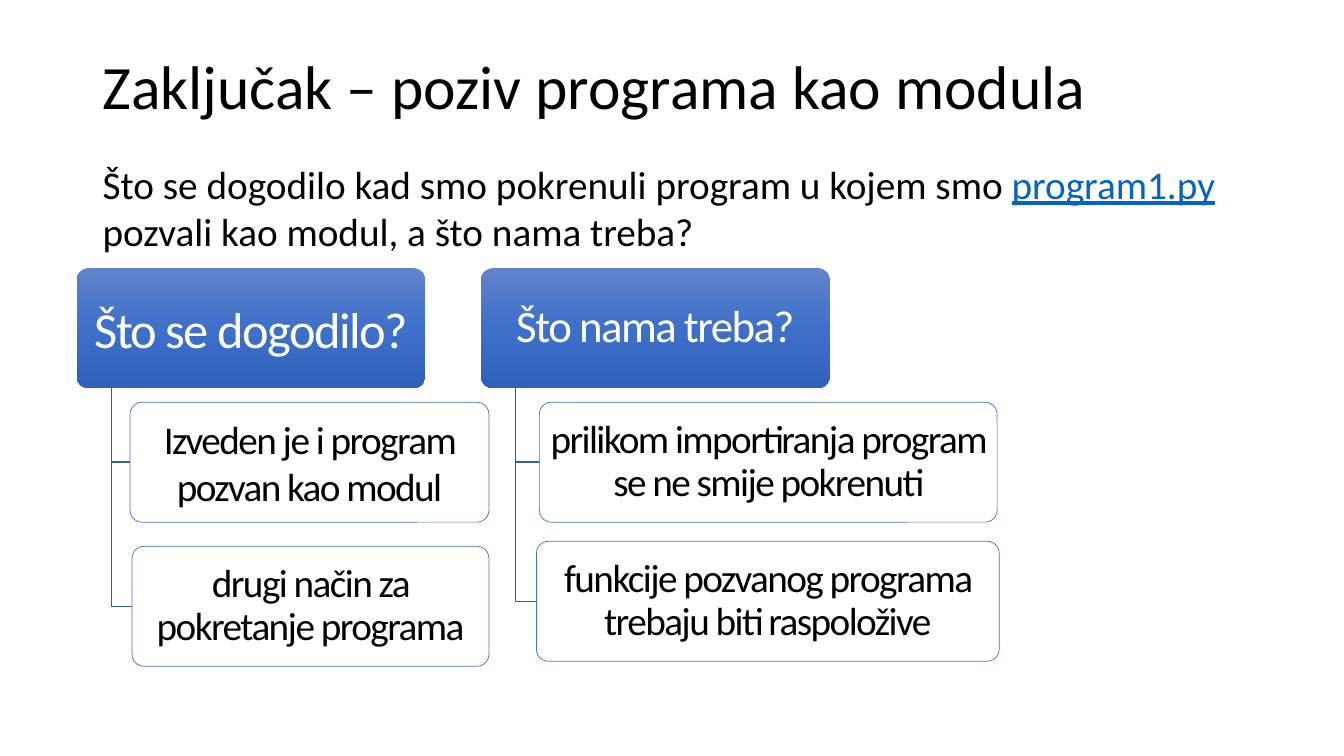
from copy import deepcopy

from pptx import Presentation
from pptx import util as u
from pptx.dml.color import RGBColor
from pptx.enum import shapes, text
from pptx.oxml.ns import qn


def color(value):
    return RGBColor.from_string(value)


def write(frame, spans, size, align=text.PP_ALIGN.LEFT, spacing=1.0, tracking=0, inset=0.1):
    """Fill a frame with one paragraph of (text, colour, underlined) spans."""
    settings = {"word_wrap": True, "vertical_anchor": text.MSO_ANCHOR.MIDDLE,
                "margin_left": u.Inches(inset), "margin_right": u.Inches(inset),
                "margin_top": u.Inches(0.05), "margin_bottom": u.Inches(0.05)}
    for name, value in settings.items():
        setattr(frame, name, value)
    para = frame.paragraphs[0]
    para.alignment, para.line_spacing = align, spacing
    for words, shade, underlined in spans:
        span = para.add_run()
        span.text = words
        for name, value in {"name": "Calibri", "size": u.Pt(size), "underline": underlined}.items():
            setattr(span.font, name, value)
        span.font.color.rgb = color(shade)
        if tracking:
            span.font._element.set("spc", str(tracking))


deck = Presentation()
deck.slide_width, deck.slide_height = u.Inches(13.33), u.Inches(7.5)
page = deck.slides.add_slide(deck.slide_layouts[6])

# Title and question
title = page.shapes.add_textbox(u.Inches(0.92), u.Inches(0.4), u.Inches(11.5), u.Inches(0.98))
write(title.text_frame, [("Zaključak – poziv programa kao modula", "000000", False)], 44, spacing=0.9)

question = page.shapes.add_textbox(u.Inches(0.92), u.Inches(1.54), u.Inches(11.7), u.Inches(1.1))
write(question.text_frame, [
    ("Što se dogodilo kad smo pokrenuli program u kojem smo ", "000000", False),
    ("program1.py ", "0563C1", True),
    ("pozvali kao modul, a što nama treba?", "000000", False)], 28)
question.text_frame.vertical_anchor = text.MSO_ANCHOR.TOP

# Two trees: heading (left, words, size, spacing), then answers (left, top, width, words, spacing)
HEAD_TOP, HEAD_WIDTH, BOX_HEIGHT = 2.66, 3.46, 1.19
HEAD_BOTTOM = HEAD_TOP + BOX_HEIGHT
trees = [
    ((0.76, "Što se dogodilo?", 36, 1.0), [
        (1.29, 3.99, 3.56, "Izveden je i program pozvan kao modul", 1.0),
        (1.31, 5.42, 3.54, "drugi način za pokretanje programa", 0.9)]),
    ((4.77, "Što nama treba?", 32, 0.9), [
        (5.35, 3.99, 4.54, "prilikom importiranja program se ne smije pokrenuti", 0.9),
        (5.32, 5.37, 4.59, "funkcije pozvanog programa trebaju biti raspoložive", 0.9)]),
]
gradient = ["6183CB", "3E70CA", "3062BB"]

for (head_left, head_words, head_size, head_spacing), answers in trees:
    # Gradient heading
    head = page.shapes.add_shape(shapes.MSO_SHAPE.ROUNDED_RECTANGLE, u.Inches(head_left),
                                 u.Inches(HEAD_TOP), u.Inches(HEAD_WIDTH), u.Inches(BOX_HEIGHT))
    head.shadow.inherit = False
    head.adjustments[0] = 0.1
    head.line.fill.background()
    head.fill.gradient()
    head.fill.gradient_angle = 270
    stop_list = head._element.spPr.find(".//" + qn("a:gsLst"))
    stop_list.insert(1, deepcopy(stop_list[0]))
    for index, stop in enumerate(head.fill.gradient_stops):
        stop.position = index / 2
        stop.color.rgb = color(gradient[index])
    write(head.text_frame, [(head_words, "FFFFFF", False)], head_size,
          text.PP_ALIGN.CENTER, head_spacing, -110)

    # Answers, each tied to the heading by an elbow
    trunk = head_left + HEAD_WIDTH / 10
    for left, top, width, words, spacing in answers:
        middle = top + BOX_HEIGHT / 2
        builder = page.shapes.build_freeform(u.Inches(trunk), u.Inches(HEAD_BOTTOM))
        builder.add_line_segments([(u.Inches(trunk), u.Inches(middle)),
                                   (u.Inches(left), u.Inches(middle))], close=False)
        elbow = builder.convert_to_shape()
        box = page.shapes.add_shape(shapes.MSO_SHAPE.ROUNDED_RECTANGLE, u.Inches(left),
                                    u.Inches(top), u.Inches(width), u.Inches(BOX_HEIGHT))
        box.adjustments[0] = 0.1
        for shape, shade, weight in [(elbow, "365B9D", 1), (box, "4472C4", 0.5)]:
            shape.shadow.inherit = False
            shape.fill.background()
            shape.line.color.rgb = color(shade)
            shape.line.width = u.Pt(weight)
        # The rounded corners already add a little to the inset
        write(box.text_frame, [(words, "000000", False)], 28,
              text.PP_ALIGN.CENTER, spacing, -110, 0.06)

deck.save("out.pptx")
